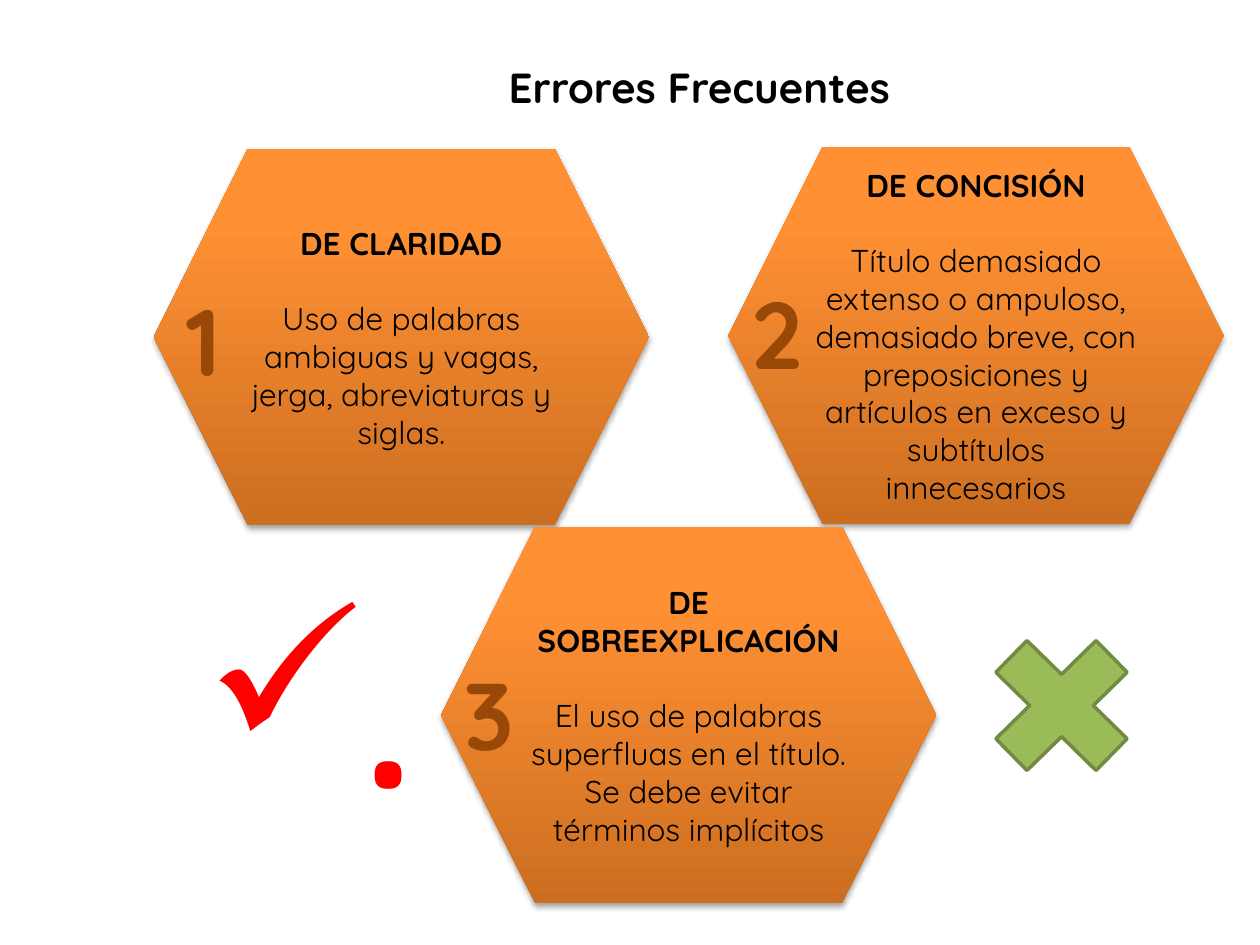
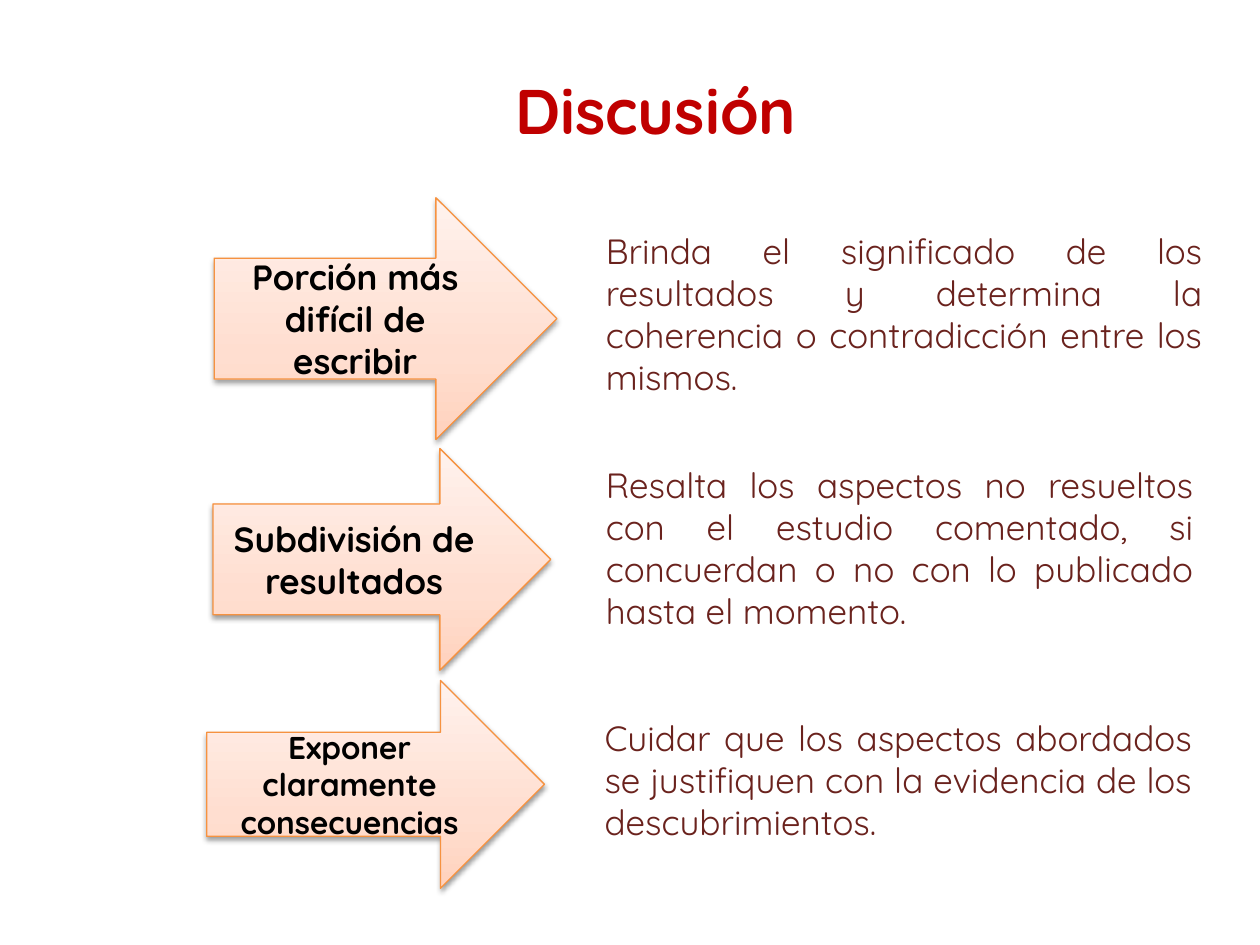
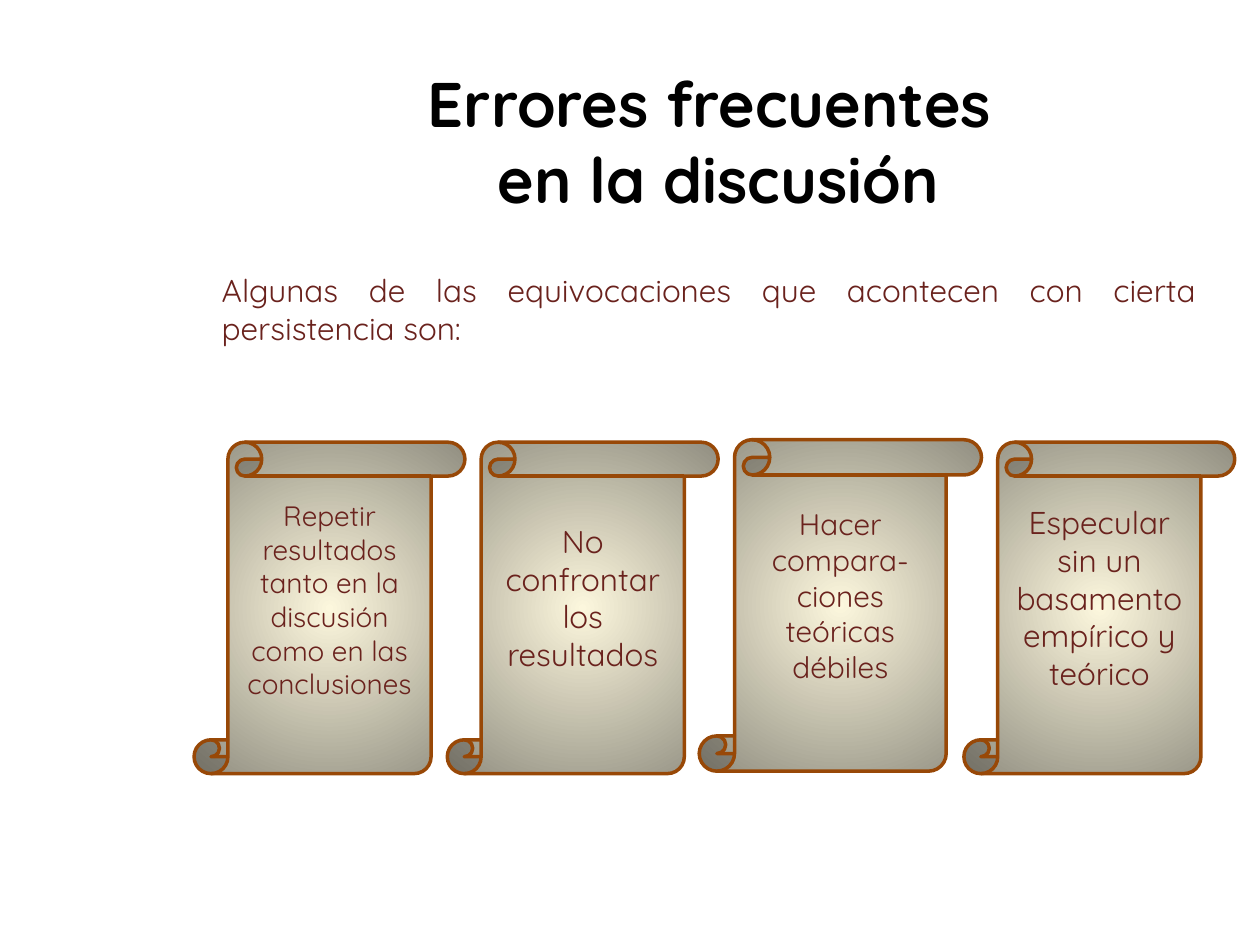
from pptx import Presentation
from pptx.dml.color import RGBColor
from pptx.enum.shapes import MSO_SHAPE
from pptx.enum.text import MSO_ANCHOR, MSO_AUTO_SIZE, PP_ALIGN
from pptx.oxml import parse_xml
from pptx.oxml.ns import nsdecls, qn
from pptx.util import Pt

FONT = "Quicksand"
BLACK, WINE, BROWN, RED, CRIMSON = "000000", "6A221D", "984807", "FF0000", "C00000"
GREEN, DARK_GREEN, ORANGE = "9BBB59", "738A42", "F69240"
UPWARD = '<a:lin ang="16200000" scaled="0"/>'
RADIAL = '<a:path path="circle"><a:fillToRect l="50000" t="50000" r="50000" b="50000"/></a:path>'
HEXAGON_FILL = ([(0, "CC6E20"), (80, "FF9034"), (100, "FF9136")], UPWARD)
ARROW_FILL = ([(0, "FFD2BD"), (35, "FFDED0"), (100, "FFF2ED")], UPWARD)
SCROLL_FILL = ([(0, "FCF7DD"), (100, "918E81")], RADIAL)
TITLE_AND_BODY, TITLE_ONLY = 1, 5
LINE_HEIGHT = 1.2


def color(value):
    return RGBColor.from_string(value)


class Deck:
    def __init__(self):
        self.presentation = Presentation()
        self.presentation.slide_width = Pt(720)
        self.presentation.slide_height = Pt(540)
        self.slide = None

    def new_slide(self, layout):
        self.slide = self.presentation.slides.add_slide(self.presentation.slide_layouts[layout])

    def format(self, paragraph, size, ink, bold=False, align=PP_ALIGN.CENTER):
        paragraph.alignment = align
        font = paragraph.font
        font.name, font.size, font.bold = FONT, Pt(size), bold
        font.color.rgb = color(ink)

    def place(self, holder, box):
        holder.left, holder.top, holder.width, holder.height = map(Pt, box)
        holder.text_frame.auto_size = MSO_AUTO_SIZE.NONE

    def title(self, box, text, size, ink=BLACK):
        heading = self.slide.shapes.title
        self.place(heading, box)
        frame = heading.text_frame
        frame.vertical_anchor = MSO_ANCHOR.MIDDLE
        frame.text = text
        self.format(frame.paragraphs[0], size, ink, True)

    def body(self, box, text, size):
        intro = self.slide.placeholders[1]
        self.place(intro, box)
        intro.text_frame.text = text
        paragraph = intro.text_frame.paragraphs[0]
        self.bullet(paragraph, 0, "<a:buNone %s/>")
        self.format(paragraph, size, WINE, align=PP_ALIGN.JUSTIFY)
        paragraph.space_before = Pt(0)

    def bullet(self, paragraph, indent, markup):
        properties = paragraph._p.get_or_add_pPr()
        properties.set("marL", str(Pt(indent)))
        properties.set("indent", str(-Pt(indent)))
        properties.append(parse_xml(markup % nsdecls("a")))

    def text(self, box, text, size, ink, bold=False, align=PP_ALIGN.CENTER, wrap=True, mark=None):
        frame = self.slide.shapes.add_textbox(*map(Pt, box)).text_frame
        frame.word_wrap = wrap
        frame.auto_size = MSO_AUTO_SIZE.SHAPE_TO_FIT_TEXT
        frame.text = text
        if mark:
            self.bullet(frame.paragraphs[0], 22.5, f'<a:buChar %s char="{mark}"/>')
        self.format(frame.paragraphs[0], size, ink, bold, align)

    def shape(self, kind, box, fill, line=None, width=0, shadow=None):
        shape = self.slide.shapes.add_shape(kind, *map(Pt, box))
        shape.shadow.inherit = False
        if isinstance(fill, str):
            shape.fill.solid()
            shape.fill.fore_color.rgb = color(fill)
        else:
            self.gradient(shape, *fill)
        if line:
            shape.line.color.rgb = color(line)
            shape.line.width = Pt(width)
        else:
            shape.line.fill.background()
        if shadow:
            self.cast_shadow(shape, *shadow)
        return shape

    def gradient(self, shape, stops, direction):
        marks = "".join(
            f'<a:gs pos="{position * 1000}"><a:srgbClr val="{value}"/></a:gs>'
            for position, value in stops
        )
        shape.fill.background()
        properties = shape._element.spPr
        properties.replace(
            properties.find(qn("a:noFill")),
            parse_xml(f'<a:gradFill {nsdecls("a")} rotWithShape="1"><a:gsLst>{marks}</a:gsLst>{direction}</a:gradFill>'),
        )

    def cast_shadow(self, shape, opacity, distance):
        shape._element.spPr.find(qn("a:effectLst")).append(parse_xml(
            f'<a:outerShdw {nsdecls("a")} blurRad="{Pt(3.1)}" dist="{Pt(distance)}" dir="5400000" rotWithShape="0">'
            f'<a:srgbClr val="{BLACK}"><a:alpha val="{opacity * 1000}"/></a:srgbClr></a:outerShdw>'
        ))

    def label(self, shape, text, size, ink=BLACK, bold=False):
        frame = shape.text_frame
        frame.word_wrap = True
        frame.vertical_anchor = MSO_ANCHOR.MIDDLE
        frame.text = text
        self.format(frame.paragraphs[0], size, ink, bold)
        return frame

    def hexagon(self, left, top, heading, explanation):
        hexagon = self.shape(MSO_SHAPE.HEXAGON, (left, top, 283, 215.3), HEXAGON_FILL, shadow=(35, 1.8))
        detail = self.label(hexagon, heading, 18, bold=True).add_paragraph()
        detail.text = explanation
        self.format(detail, 18, BLACK)
        detail.space_before = Pt(18 * LINE_HEIGHT)

    def arrow(self, box, text, size):
        arrow = self.shape(MSO_SHAPE.RIGHT_ARROW, box, ARROW_FILL, ORANGE, 0.75, (38, 1.6))
        self.label(arrow, text, size, bold=True)

    def scroll(self, left, top, width, text, size, gap):
        scroll = self.shape(MSO_SHAPE.VERTICAL_SCROLL, (left, top, width, 189.4), SCROLL_FILL, BROWN, 2)
        self.label(scroll, text, size, WINE).margin_bottom = Pt(3.6 + gap * LINE_HEIGHT)


def title_errors(deck):
    deck.new_slide(TITLE_ONLY)
    deck.title((229.7, 31.7, 339.8, 36), "Errores Frecuentes", 24)
    errors = [
        ((87.8, 85), (93.6, 157.7), "DE CLARIDAD",
         "Uso de palabras ambiguas y vagas, jerga, abreviaturas y siglas."),
        ((416.2, 84.2), (421.2, 153.4), "DE CONCISIÓN",
         "Título demasiado extenso o ampuloso, demasiado breve, con preposiciones y "
         "artículos en exceso y subtítulos innecesarios"),
        ((252, 301), (257, 371.5), "DE SOBREEXPLICACIÓN",
         "El uso de palabras superfluas en el título. Se debe evitar términos implícitos"),
    ]
    for number, (corner, number_corner, heading, explanation) in enumerate(errors, 1):
        deck.hexagon(*corner, heading, explanation)
        deck.text((*number_corner, 45.4, 72.7), str(number), 54, BROWN, True, wrap=False)
    deck.shape(MSO_SHAPE.MATH_MULTIPLY, (551.5, 349.2, 110.2, 108), GREEN, DARK_GREEN, 2)
    deck.text((110.2, 332.6, 138.2, 146.9), ".", 115, RED, True, PP_ALIGN.LEFT, mark="✓")


def discussion(deck):
    deck.new_slide(TITLE_ONLY)
    deck.title((99.4, 17.3, 550.8, 90), "Discusión", 36, CRIMSON)
    points = [
        ((122.4, 113, 195.8, 138.2), "Porción más difícil de escribir", 20,
         (339.1, 127.4, 355, 104.4),
         "Brinda el significado de los resultados y determina la coherencia o "
         "contradicción entre los mismos."),
        ((121.7, 256.3, 193, 126.7), "Subdivisión de resultados", 20,
         (339.1, 261.4, 349.9, 104.4),
         "Resalta los aspectos no resueltos con el estudio comentado, si concuerdan o "
         "no con lo publicado hasta el momento."),
        ((118.1, 388.8, 193, 118.8), "Exponer claramente consecuencias", 18,
         (338.4, 406.1, 349.9, 79.9),
         "Cuidar que los aspectos abordados se justifiquen con la evidencia de los "
         "descubrimientos."),
    ]
    for arrow_box, heading, size, explanation_box, explanation in points:
        deck.arrow(arrow_box, heading, size)
        deck.text(explanation_box, explanation, 20, WINE, align=PP_ALIGN.JUSTIFY)


def discussion_errors(deck):
    deck.new_slide(TITLE_AND_BODY)
    deck.title((86.4, 49, 648, 62.6), "Errores frecuentes \ven la discusión", 36)
    deck.body((119.5, 151.2, 571, 96.5),
              "Algunas de las equivocaciones que acontecen con cierta persistencia son:", 18)
    mistakes = [
        (110.9, 252.7, 154.8, "Repetir resultados tanto en la discusión como en las conclusiones", 16, 16),
        (255.6, 252.7, 154.8, "No confrontar los resultados", 18, 18),
        (399.6, 251.3, 161.3, "Hacer compara-ciones teóricas débiles", 17, 18),
        (550.8, 252.7, 154.8, "Especular sin un basamento empírico y teórico", 18, 18),
    ]
    for mistake in mistakes:
        deck.scroll(*mistake)


def main():
    deck = Deck()
    title_errors(deck)
    discussion(deck)
    discussion_errors(deck)
    deck.presentation.save("out.pptx")


if __name__ == "__main__":
    main()
